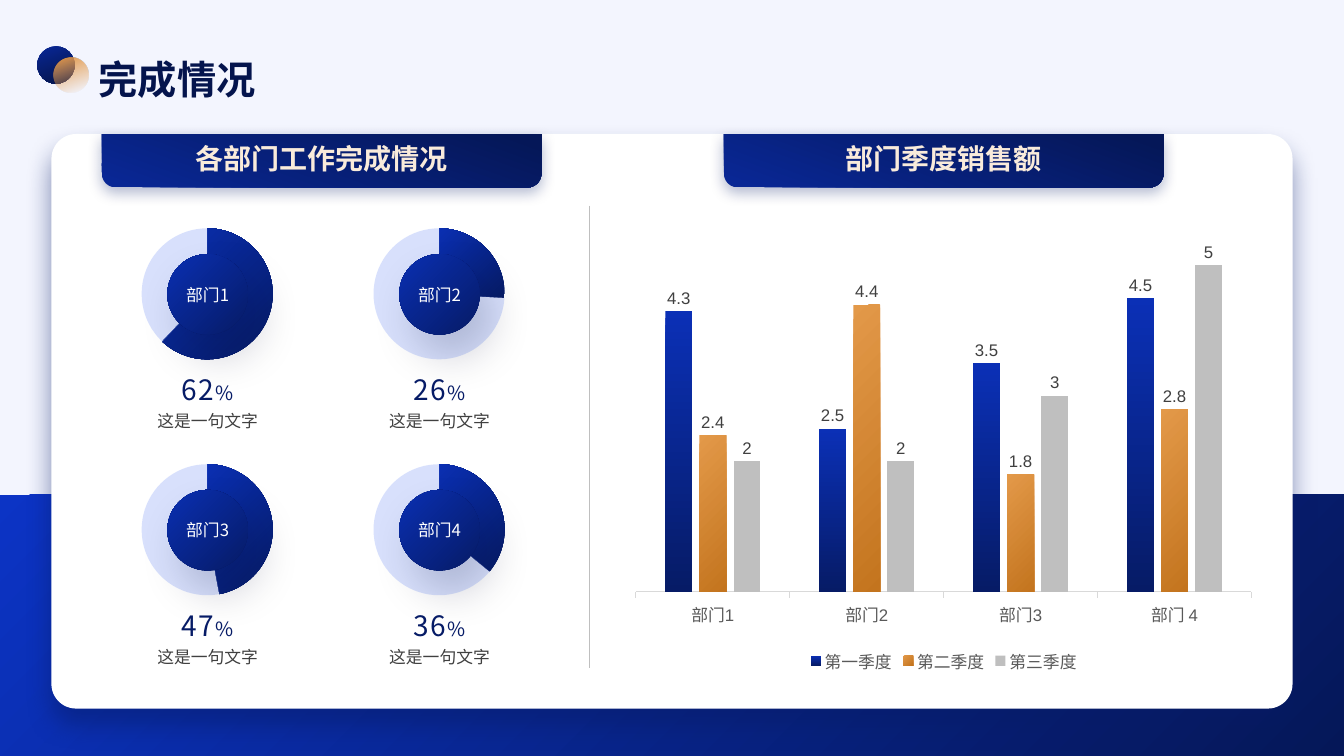
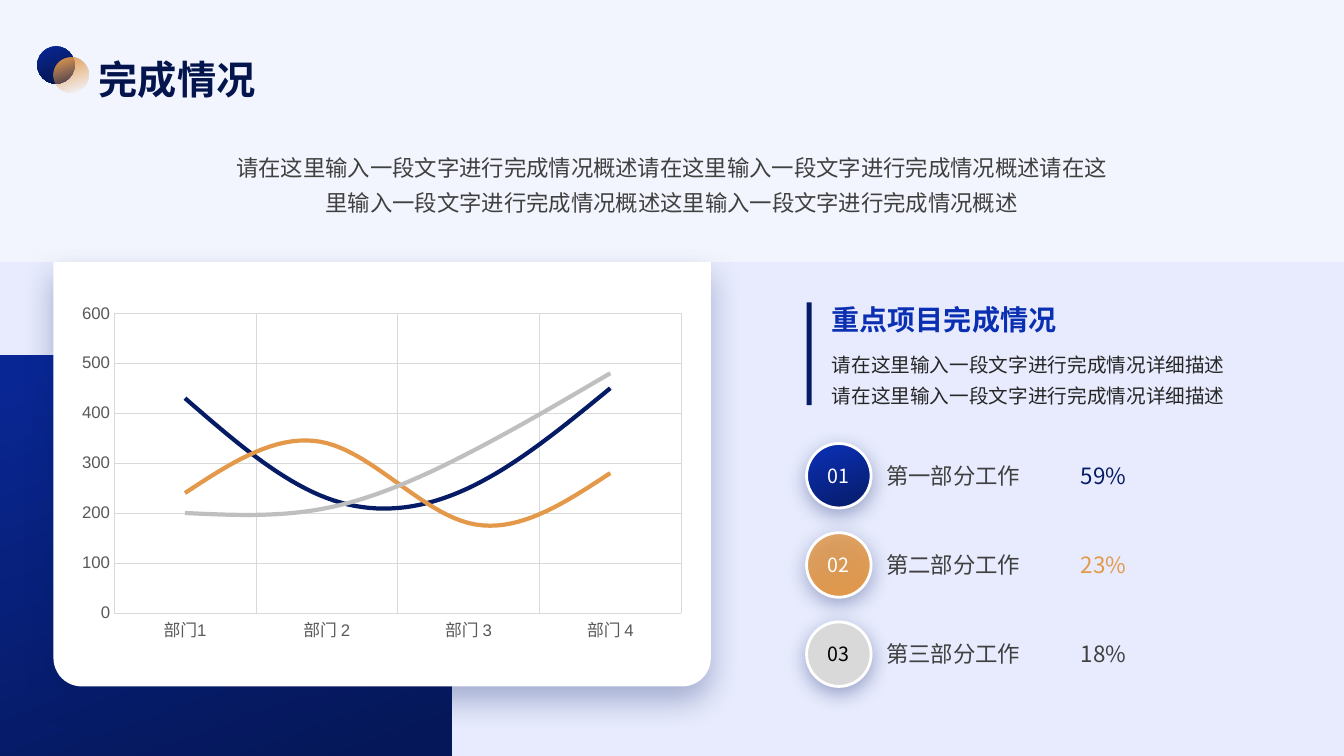
from pptx import Presentation
from pptx import util as u
from pptx.chart.data import CategoryChartData
from pptx.dml.color import RGBColor
from pptx.enum import chart as ch
from pptx.enum import shapes, text
from pptx.oxml import parse_xml
from pptx.oxml.ns import nsdecls, qn

CJK, LATIN = "Noto Sans CJK SC", "Arial"
COLORS = {
    "page": "F3F5FE", "white": "FFFFFF", "black": "000000", "periwinkle": "B3C3FB",
    "title": "04144D", "navy": "061B66", "navy_deep": "051758", "navy_mid": "092794",
    "navy_dark": "041346", "blue": "0A2FB2", "blue_bar": "0B30B6", "royal": "0C34C5",
    "orange": "E39949", "orange_dark": "C3741E", "cream": "F9EBDB", "shade": "030D33",
    "text": "404040", "text_dark": "262626", "axis": "595959", "silver": "BFBFBF",
    "grid": "D9D9D9",
}
LEFT, CENTER = text.PP_ALIGN.LEFT, text.PP_ALIGN.CENTER
SHAPE = shapes.MSO_SHAPE


# Fills and effects
def rgb(name):
    return RGBColor.from_string(COLORS[name])


def color_xml(name, alpha=100):
    return f'<a:srgbClr val="{COLORS[name]}"><a:alpha val="{alpha * 1000}"/></a:srgbClr>'


def solid(name, alpha=100):
    return f'<a:solidFill {nsdecls("a")}>{color_xml(name, alpha)}</a:solidFill>'


def gradient(*stops, angle=None):
    """Stops are (position, colour[, alpha]); no angle means radial from the top left."""
    stop_xml = "".join(f'<a:gs pos="{position * 1000}">{color_xml(*color)}</a:gs>'
                       for position, *color in stops)
    if angle is None:
        shade = '<a:path path="circle"><a:fillToRect r="100000" b="100000"/></a:path>'
    else:
        shade = f'<a:lin ang="{angle * 60000}" scaled="0"/>'
    return (f'<a:gradFill {nsdecls("a")} rotWithShape="1">'
            f'<a:gsLst>{stop_xml}</a:gsLst>{shade}</a:gradFill>')


RADIAL_BLUE = gradient((0, "blue"), (100, "navy"))


def paint(fill_format, properties, fill):
    fill_format.background()
    properties.replace(properties.find(qn("a:noFill")), parse_xml(fill))


def paint_chart_part(part, fill):
    paint(part.format.fill, part.format._element.get_or_add_spPr(), fill)


def add_shadow(shape, color, alpha, blur, distance, direction=90):
    effects = shape.element.spPr.find(qn("a:effectLst"))
    effects.append(parse_xml(
        f'<a:outerShdw {nsdecls("a")} blurRad="{u.Pt(blur)}" dist="{u.Pt(distance)}" '
        f'dir="{direction * 60000}" algn="ctr" rotWithShape="0">'
        f'{color_xml(color, alpha)}</a:outerShdw>'))


# Text and shapes
def box(left, top, width, height):
    return [u.Inches(value) for value in (left, top, width, height)]


def add_run(paragraph, words, size, color, bold=False, spacing=None):
    run = paragraph.add_run()
    run.text = words
    run.font.size = u.Pt(size)
    run.font.bold = bold
    run.font.color.rgb = rgb(color)
    run.font.name = CJK
    properties = run.font._element
    properties.append(parse_xml(f'<a:ea {nsdecls("a")} typeface="{CJK}"/>'))
    if spacing:
        properties.set("spc", str(spacing))


def write(shape, paragraphs, align=LEFT, line_points=None, anchor=text.MSO_ANCHOR.MIDDLE):
    """Each paragraph is a list of add_run argument tuples."""
    frame = shape.text_frame
    frame.word_wrap = True
    frame.auto_size = text.MSO_AUTO_SIZE.NONE
    frame.vertical_anchor = anchor
    frame.margin_left = frame.margin_top = frame.margin_right = frame.margin_bottom = 0
    for index, runs in enumerate(paragraphs):
        paragraph = frame.add_paragraph() if index else frame.paragraphs[0]
        paragraph.alignment = align
        if line_points:
            paragraph.line_spacing = u.Pt(line_points)
        for run in runs:
            add_run(paragraph, *run)


def add_text(slide, place, paragraphs, **options):
    write(slide.shapes.add_textbox(*box(*place)), paragraphs, **options)


def add_shape(slide, kind, place, fill, adjustments=(), shadow=None, outline=None):
    shape = slide.shapes.add_shape(kind, *box(*place))
    for index, value in enumerate(adjustments):
        shape.adjustments[index] = value
    paint(shape.fill, shape.element.spPr, fill)
    if outline:
        shape.line.color.rgb = rgb(outline)
        shape.line.width = u.Pt(2)
    else:
        shape.line.fill.background()
    shape.shadow.inherit = False
    if shadow:
        add_shadow(shape, *shadow)
    return shape


def add_divider(slide, x, top, bottom):
    line = slide.shapes.add_connector(shapes.MSO_CONNECTOR.STRAIGHT, u.Inches(x),
                                      u.Inches(top), u.Inches(x), u.Inches(bottom))
    line.line.color.rgb = rgb("silver")
    line.line.width = u.Pt(0.5)
    line.element.spPr.append(parse_xml(f'<a:effectLst {nsdecls("a")}/>'))


def add_titled_slide(presentation, title):
    slide = presentation.slides.add_slide(presentation.slide_layouts[5])
    holder = slide.shapes.title
    holder.left, holder.top, holder.width, holder.height = box(0.98, 0.56, 5.14, 0.45)
    write(holder, [[(title, 28, "title", True)]])
    add_shape(slide, SHAPE.OVAL, (0.37, 0.46, 0.37, 0.37),
              gradient((4, "navy_mid"), (100, "navy_dark"), angle=70))
    add_shape(slide, SHAPE.OVAL, (0.53, 0.57, 0.35, 0.35),
              gradient((4, "orange"), (95, "orange", 0), angle=70))
    return slide


def add_banner(slide, left, words):
    banner = add_shape(slide, SHAPE.ROUND_2_SAME_RECTANGLE, (left, 1.33, 4.36, 0.53),
                       gradient((4, "navy_mid"), (95, "navy_deep"), angle=290),
                       (0, 0.26), ("navy", 30, 10, 4))
    write(banner, [[(words, 20, "cream", True)]], align=CENTER)


# Charts
def add_chart(slide, kind, place, categories, series):
    data = CategoryChartData()
    data.categories = categories
    for name, values in series:
        data.add_series(name, values)
    chart = slide.shapes.add_chart(kind, *box(*place), data).chart
    chart.has_title = False
    chart.has_legend = False
    style_font(chart.font, "axis")
    return chart


def style_font(font, color):
    font.name, font.size = LATIN, u.Pt(12)
    font.color.rgb = rgb(color)


def style_gridlines(axis):
    axis.has_major_gridlines = True
    line = axis.major_gridlines.format.line
    line.color.rgb = rgb("grid")
    line.width = u.Pt(0.5)


def set_scale(axis, maximum, step):
    axis.minimum_scale, axis.maximum_scale, axis.major_unit = 0, maximum, step


def add_ring(slide, left, top, label, percent):
    chart = add_chart(slide, ch.XL_CHART_TYPE.DOUGHNUT, (left, top, 2.89, 1.93),
                      ["1", "2"], [("Series 1", [percent, 100 - percent])])
    plot = chart.plots[0]
    for index, fill in enumerate((RADIAL_BLUE, solid("periwinkle", 50))):
        point = plot.series[0].points[index]
        paint_chart_part(point, fill)
        point.format.line.fill.background()
    plot._element.find(qn("c:holeSize")).set("val", "75")
    # Fixed inner plot area
    area = chart._chartSpace.chart.plotArea
    for old in area.findall(qn("c:layout")):
        area.remove(old)
    sizes = "".join(f'<c:{key} val="{value}"/>' for key, value in
                    (("x", 0.275), ("y", 0.163), ("w", 0.45), ("h", 0.675)))
    area.insert(0, parse_xml(
        f'<c:layout {nsdecls("c")}><c:manualLayout><c:layoutTarget val="inner"/>'
        f'<c:xMode val="edge"/><c:yMode val="edge"/>{sizes}</c:manualLayout></c:layout>'))
    # Centre disc and captions
    disc = add_shape(slide, SHAPE.OVAL, (left + 1.05, top + 0.57, 0.8, 0.8), RADIAL_BLUE,
                     shadow=("shade", 19, 30, 18, 60))
    write(disc, [[(label, 12, "white")]], align=CENTER)
    add_text(slide, (left + 0.83, top + 1.74, 1.24, 0.34),
             [[(str(percent), 20, "navy", False, 100), ("%", 14, "navy", False, 100)]],
             align=CENTER)
    add_text(slide, (left + 0.83, top + 2.1, 1.24, 0.25),
             [[("这是一句文字", 12, "text")]], align=CENTER)


def add_sales_chart(slide):
    chart = add_chart(slide, ch.XL_CHART_TYPE.COLUMN_CLUSTERED, (6.18, 1.89, 6.36, 4.83),
                      ["部门1", "部门2", "部门3", "部门 4"],
                      [("第一季度", [4.3, 2.5, 3.5, 4.5]), ("第二季度", [2.4, 4.4, 1.8, 2.8]),
                       ("第三季度", [2, 2, 3, 5])])
    plot = chart.plots[0]
    plot.vary_by_categories = False
    plot.gap_width, plot.overlap = 219, -27
    fills = (gradient((0, "blue_bar"), (100, "navy"), angle=90),
             gradient((0, "orange"), (100, "orange_dark"), angle=45), solid("silver"))
    for series, fill in zip(plot.series, fills):
        paint_chart_part(series, fill)
    plot.has_data_labels = True
    labels = plot.data_labels
    labels.show_value = True
    labels.position = ch.XL_LABEL_POSITION.OUTSIDE_END
    style_font(labels.font, "text")
    chart.has_legend = True
    chart.legend.position = ch.XL_LEGEND_POSITION.BOTTOM
    chart.legend.include_in_layout = False
    style_font(chart.legend.font, "axis")
    chart.value_axis.visible = False
    chart.value_axis.has_major_gridlines = False
    set_scale(chart.value_axis, 6, 1)
    chart.category_axis.format.line.color.rgb = rgb("grid")
    chart.category_axis.format.line.width = u.Pt(0.75)


def add_trend_chart(slide):
    chart = add_chart(slide, ch.XL_CHART_TYPE.LINE, (0.69, 2.95, 6.19, 3.49),
                      ["部门1", "部门 2", "部门 3", "部门 4"],
                      [("Series 1", [430, 230, 250, 450]), ("Series 2", [240, 340, 180, 280]),
                       ("Series 3", [200, 210, 320, 480])])
    plot = chart.plots[0]
    plot.vary_by_categories = False
    for series, color in zip(plot.series, ("navy", "orange", "silver")):
        series.smooth = True
        series.marker.style = ch.XL_MARKER_STYLE.NONE
        series.format.line.color.rgb = rgb(color)
        series.format.line.width = u.Pt(3)
    for axis in (chart.category_axis, chart.value_axis):
        style_gridlines(axis)
        axis.major_tick_mark = ch.XL_TICK_MARK.NONE
        axis.format.line.fill.background()
    set_scale(chart.value_axis, 600, 100)


# Slides
def build_departments(presentation):
    slide = add_titled_slide(presentation, "完成情况")
    add_shape(slide, SHAPE.RECTANGLE, (0, 4.91, 13.33, 2.59),
              gradient((0, "royal"), (100, "navy_deep"), angle=45))
    add_shape(slide, SHAPE.ROUNDED_RECTANGLE, (0.51, 1.33, 12.31, 5.7), solid("white"),
              (0.043,), ("navy", 50, 18, 12))
    add_sales_chart(slide)
    add_banner(slide, 7.18, "部门季度销售额")
    add_banner(slide, 1.01, "各部门工作完成情况")
    for index, percent in enumerate((62, 26, 47, 36)):
        row, column = divmod(index, 2)
        add_ring(slide, 0.61 + 2.3 * column, 1.95 + 2.34 * row, f"部门{index + 1}", percent)
    add_divider(slide, 5.85, 2.04, 6.63)


def build_projects(presentation):
    slide = add_titled_slide(presentation, "完成情况")
    add_shape(slide, SHAPE.RECTANGLE, (0, 2.6, 13.33, 4.9), solid("periwinkle", 18))
    add_shape(slide, SHAPE.RECTANGLE, (0, 3.52, 4.48, 3.98),
              gradient((4, "navy_mid"), (95, "navy_deep"), angle=70))
    add_shape(slide, SHAPE.ROUND_2_SAME_RECTANGLE, (0.53, 2.6, 6.52, 4.21), solid("white"),
              (0, 0.067), ("navy", 30, 22, 10))
    add_trend_chart(slide)
    summary = "请在这里输入一段文字进行完成情况概述" * 3 + "这里输入一段文字进行完成情况概述"
    add_text(slide, (2.29, 1.45, 8.75, 0.7), [[(summary, 16, "text")]],
             align=CENTER, line_points=25, anchor=text.MSO_ANCHOR.TOP)
    # Key projects heading
    add_shape(slide, SHAPE.RECTANGLE, (8, 3, 0.05, 1.02), solid("navy"))
    add_text(slide, (8.25, 3, 4.48, 0.34), [[("重点项目完成情况", 20, "blue", True)]])
    detail = [("请在这里输入一段文字进行完成情况详细描述", 14, "text_dark")]
    add_text(slide, (8.25, 3.43, 4.48, 0.62), [detail, detail],
             line_points=22, anchor=text.MSO_ANCHOR.TOP)
    # Numbered work items
    items = (
        ("第一部分工作", "59%", "navy", "white",
         gradient((4, "blue_bar"), (100, "navy"), angle=70)),
        ("第二部分工作", "23%", "orange", "white",
         gradient((4, "orange", 79), (100, "orange"), angle=70)),
        ("第三部分工作", "18%", "text", "black", solid("grid")),
    )
    for index, (name, share, share_color, number_color, fill) in enumerate(items):
        top = 4.4 + 0.885 * index
        badge = add_shape(slide, SHAPE.OVAL, (8, top, 0.64, 0.64), fill,
                          shadow=("navy", 34, 14, 4), outline="white")
        write(badge, [[(f"{index + 1:02}", 14, number_color)]], align=CENTER)
        add_text(slide, (8.79, top + 0.18, 1.6, 0.27), [[(name, 16, "text")]])
        add_text(slide, (10.72, top + 0.18, 0.66, 0.27), [[(share, 16, share_color)]])


def main():
    presentation = Presentation()
    presentation.slide_width, presentation.slide_height = u.Inches(13.33), u.Inches(7.5)
    background = presentation.slide_master.background.fill
    background.solid()
    background.fore_color.rgb = rgb("page")
    build_departments(presentation)
    build_projects(presentation)
    presentation.save("out.pptx")


if __name__ == "__main__":
    main()
